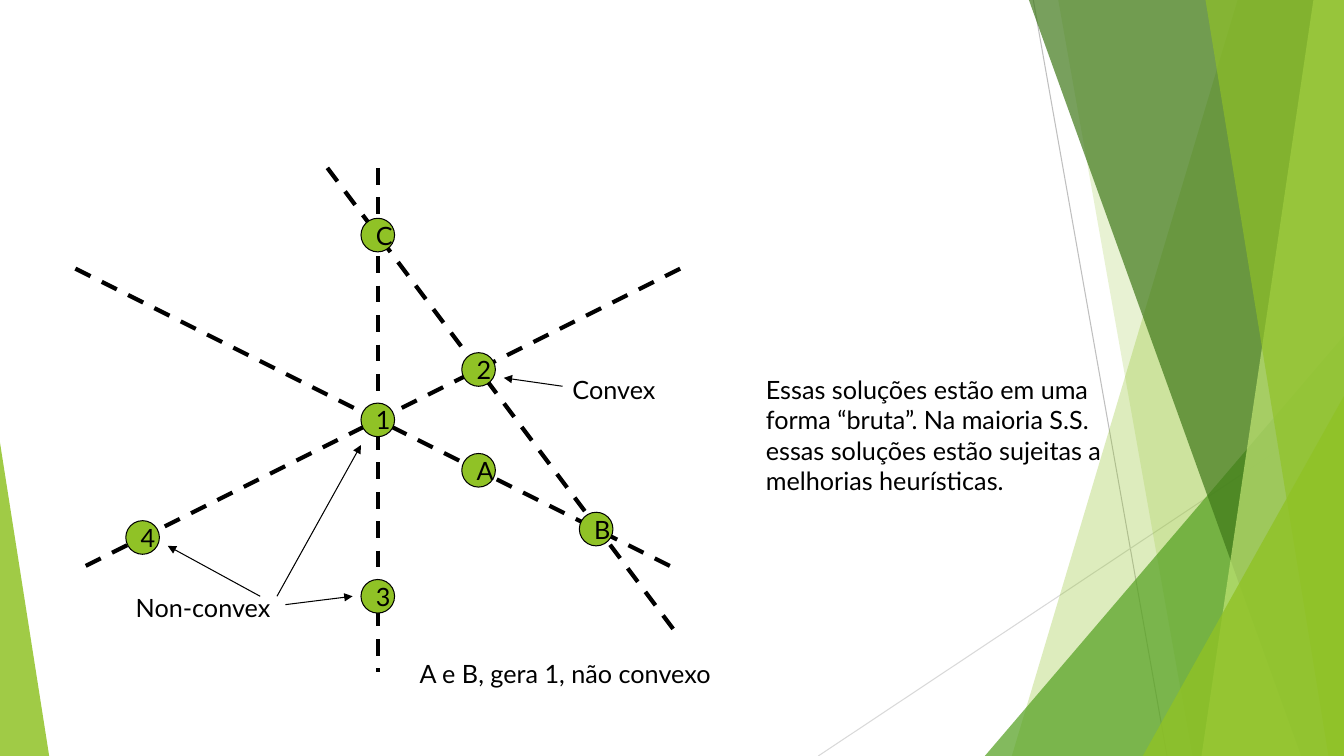
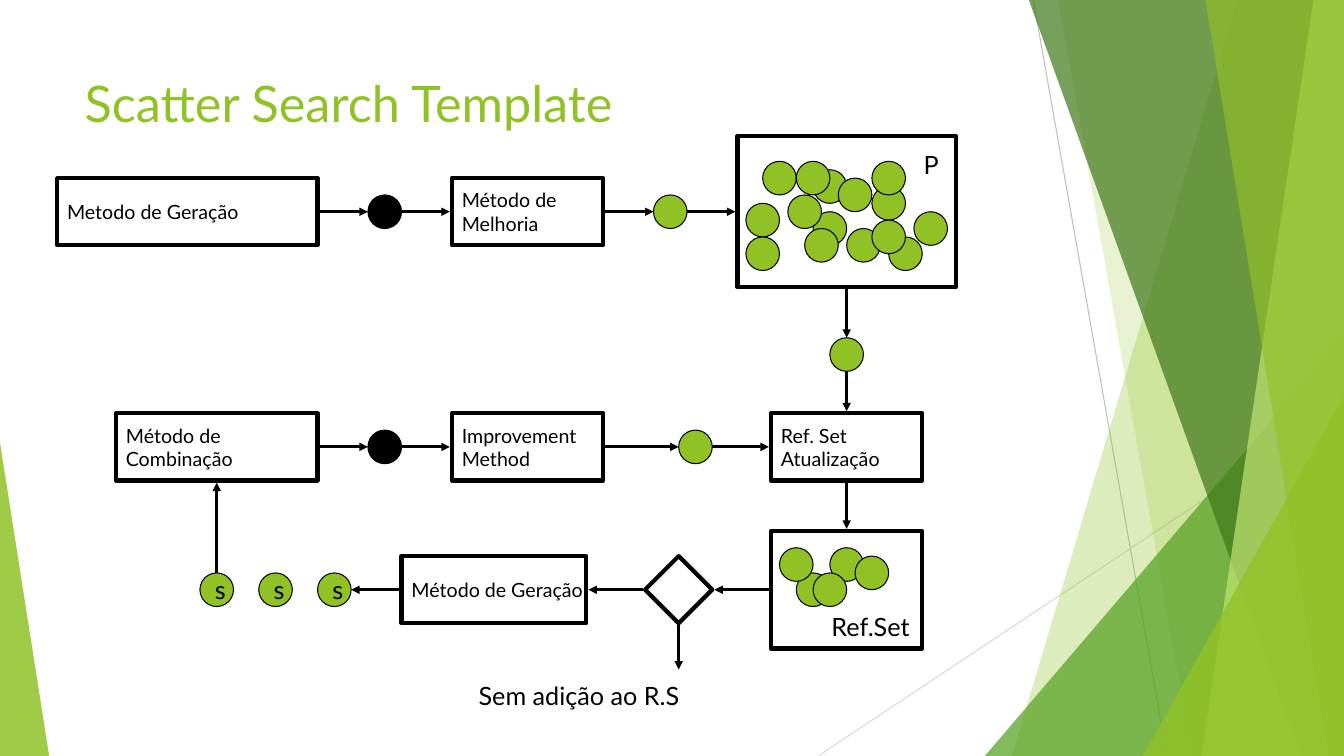
import pptx
import pptx.dml.color
import pptx.enum.dml
import pptx.enum.shapes
import pptx.enum.text
import pptx.oxml.ns
import pptx.util
from lxml import etree

Cm, Pt = pptx.util.Cm, pptx.util.Pt
SHAPE = pptx.enum.shapes.MSO_SHAPE
ANCHOR = pptx.enum.text.MSO_ANCHOR
qn = pptx.oxml.ns.qn

WIDTH, HEIGHT = 33.87, 19.05
STEP = 2.54 / 12  # diagram grid, in cm
GAP = 0.25  # space between a box edge and an arrow, in steps
RADIUS = 2  # dot radius, in steps
FONT = "Lato"
GREEN, BLACK = "90C226", "000000"


def rgb(value):
    return pptx.dml.color.RGBColor.from_string(value)


def write(sp, text, size=18, color=BLACK, anchor=ANCHOR.TOP, wrap=False):
    """Fill a shape with left-aligned text, one paragraph a line."""
    tf = sp.text_frame
    tf.word_wrap = wrap
    tf.auto_size = pptx.enum.text.MSO_AUTO_SIZE.NONE
    tf.vertical_anchor = anchor
    for i, line in enumerate(text.split("\n")):
        p = tf.paragraphs[0] if i == 0 else tf.add_paragraph()
        p.alignment = pptx.enum.text.PP_ALIGN.LEFT
        r = p.add_run()
        r.text = line
        r.font.name, r.font.size = FONT, Pt(size)
        r.font.color.rgb = rgb(color)


def paint(sp, fill=None, alpha=None, weight=None):
    """Set fill, opacity in percent and black outline."""
    sp.shadow.inherit = False
    if fill:
        sp.fill.solid()
        sp.fill.fore_color.rgb = rgb(fill)
    else:
        sp.fill.background()
    if weight:
        sp.line.color.rgb, sp.line.width = rgb(BLACK), Pt(weight)
    else:
        sp.line.fill.background()
    if alpha:
        clr = sp.element.xpath("./p:spPr/a:solidFill/a:srgbClr")[0]
        etree.SubElement(clr, qn("a:alpha"), val=str(alpha * 1000))
    return sp


def draw_line(slide, start, end, color=BLACK, weight=0.75, dash=False, arrow=False):
    sp = slide.shapes.add_connector(
        pptx.enum.shapes.MSO_CONNECTOR.STRAIGHT, *start, *end)
    sp.line.color.rgb, sp.line.width = rgb(color), Pt(weight)
    if dash:
        sp.line.dash_style = pptx.enum.dml.MSO_LINE.DASH
    if arrow:
        ln = sp.element.xpath("./p:spPr/a:ln")[0]
        etree.SubElement(ln, qn("a:tailEnd"), type="triangle")
    etree.SubElement(sp.element.spPr, qn("a:effectLst"))


# Parts placed on the step grid of a box, given by its left and top in cm
def place(box, x, y):
    return Cm(box[0] + x * STEP), Cm(box[1] + y * STEP)


def inner(box, x, y):
    return box[0] + x * STEP, box[1] + y * STEP


def add_line(slide, box, x1, y1, x2, y2, **fmt):
    draw_line(slide, place(box, x1, y1), place(box, x2, y2), **fmt)


def add_dot(slide, box, x, y, text="", fill=GREEN):
    size = Cm(2 * RADIUS * STEP)
    sp = slide.shapes.add_shape(
        SHAPE.OVAL, *place(box, x - RADIUS, y - RADIUS), size, size)
    paint(sp, fill, weight=0.75)
    if text:
        write(sp, text, anchor=ANCHOR.MIDDLE)


def add_box(slide, box, x, y, w, h, text="", kind=SHAPE.RECTANGLE):
    sp = slide.shapes.add_shape(
        kind, *place(box, x, y), Cm(w * STEP), Cm(h * STEP))
    paint(sp, weight=3)
    if text:
        write(sp, text, size=14, anchor=ANCHOR.MIDDLE)


def add_label(slide, box, x, y, w, text, h=4.8, **fmt):
    sp = slide.shapes.add_textbox(*place(box, x, y), Cm(w * STEP), Cm(h * STEP))
    write(sp, text, **fmt)


# Shared background
def add_band(slide, top_x, bottom_x, color, alpha):
    fb = slide.shapes.build_freeform(Cm(top_x), 0)
    fb.add_line_segments([(Cm(WIDTH), 0), (Cm(WIDTH), Cm(HEIGHT)),
                          (Cm(bottom_x), Cm(HEIGHT))])
    paint(fb.convert_to_shape(), color, alpha)


def add_corner(slide, left, top, width, apex, color, alpha):
    sp = slide.shapes.add_shape(SHAPE.ISOSCELES_TRIANGLE, Cm(left), Cm(top),
                                Cm(width), Cm(HEIGHT - top))
    sp.adjustments[0] = apex
    paint(sp, color, alpha)


def decorate_master(prs, slide):
    """Draw the green facets with a slide's tools, then move them to the master."""
    draw_line(slide, (Cm(26.04), 0), (Cm(29.41), Cm(HEIGHT)), color="BFBFBF")
    draw_line(slide, (Cm(WIDTH), Cm(10.24)), (Cm(20.62), Cm(HEIGHT)), color="D9D9D9")
    add_band(slide, 31.19, 25.5, GREEN, 30)
    add_band(slide, 26.67, 30.05, GREEN, 20)
    add_corner(slide, 24.82, 8.46, WIDTH - 24.82, 1, "54A021", 72)
    add_band(slide, 25.93, 32.79, "3F7819", 70)
    add_band(slide, 33.1, 30.28, "C0E474", 70)
    add_band(slide, 30.38, 33.48, GREEN, 65)
    add_corner(slide, 28.8, 9.98, WIDTH - 28.8, 1, GREEN, 80)
    add_corner(slide, 0, 11.15, 1.24, 0, GREEN, 85)
    tree = prs.slide_master.shapes.element
    for i, sp in enumerate(list(slide.shapes)):
        sp.element.xpath(".//p:cNvPr")[0].set("id", str(100 + i))
        tree.insert(2 + i, sp.element)


# Slide 1: convex and non-convex combinations
def draw_combinations(slide, box):
    for ends in [(36, 0, 36, 60), (72, 12, 0, 48), (0, 12, 72, 48), (30, 0, 72, 56)]:
        add_line(slide, box, *ends, weight=3, dash=True)
    nodes = {"A": (48, 36), "B": (62, 43), "C": (36, 8), "1": (36, 30),
             "2": (48, 24), "3": (36, 51), "4": (8, 44)}
    for name, (x, y) in nodes.items():
        add_dot(slide, box, x, y, name)
    add_label(slide, box, 58, 24, 12.6, "Convex")
    add_label(slide, box, 6, 50, 18.4, "Non-convex")
    for ends in [(58, 26, 51, 25), (24, 51, 34, 33), (25, 52, 33, 51), (22, 51, 11, 45)]:
        add_line(slide, box, *ends, arrow=True)
    add_label(slide, box, 39.8, 57.8, 38.5, "A e B, gera 1, não convexo")


def draw_remark(slide, box):
    add_label(slide, box, 0, 0, 46.9,
              "Essas soluções estão em uma forma “bruta”. Na maioria S.S. "
              "essas soluções estão sujeitas a melhorias heurísticas.",
              h=15.7, wrap=True)


# Slide 2: flow of the method
def draw_set(slide, box, w, h, dots, label):
    """A framed set of solutions; label is x, y, width and text."""
    add_box(slide, box, 0, 0, w, h)
    for x, y in dots:
        add_dot(slide, box, x, y)
    add_label(slide, box, *label)


def draw_flow(slide, box):
    rows = top, middle, bottom = 9, 37, 54
    steps = [(0, top, 31, "Metodo de Geração"),
             (47, top, 18, "Método de\nMelhoria"),
             (7, middle, 24, "Método de\nCombinação"),
             (47, middle, 18, "Improvement\nMethod"),
             (85, middle, 18, "Ref. Set\nAtualização"),
             (41, bottom, 22, "Método de Geração")]
    for x, y, w, text in steps:
        add_box(slide, box, x, y - 4, w, 8, text)
    add_box(slide, box, 70, bottom - 4, 8, 8, kind=SHAPE.DIAMOND)

    # Solutions between the steps
    for y in rows[:2]:
        add_dot(slide, box, 39, y, fill=BLACK)
    for x, y in [(73, top), (94, 26), (76, middle)]:
        add_dot(slide, box, x, y)
    for x in (19, 26, 33):
        add_dot(slide, box, x, bottom, "s")

    # Arrows: along each row, then down or up each column
    across = {top: [(31 + GAP, 37), (41, 47 - GAP), (65 + GAP, 71), (75, 81 - GAP)],
              middle: [(31 + GAP, 37), (41, 47 - GAP), (65 + GAP, 74), (78, 85 - GAP)],
              bottom: [(85 - GAP, 78 + GAP), (70 - GAP, 63 + GAP), (41 - GAP, 35)]}
    upright = {94: [(18 + GAP, 24), (28, 33 - GAP), (41 + GAP, 47 - GAP)],
               19: [(52, 41 + GAP)],
               74: [(58, 63.5)]}
    arrows = [(a, y, b, y) for y, spans in across.items() for a, b in spans]
    arrows += [(x, a, x, b) for x, spans in upright.items() for a, b in spans]
    for ends in arrows:
        add_line(slide, box, *ends, weight=2, arrow=True)
    add_label(slide, box, 49, 64.2, 27.2, "Sem adição ao R.S")

    # Population and reference set
    population = [(20, 14), (11, 6), (3, 10), (18, 8), (11, 11), (5, 5), (10, 13),
                  (3, 14), (15, 13), (9, 5), (18, 12), (8, 9), (23, 11), (14, 7), (18, 5)]
    draw_set(slide, inner(box, 81, 0), 26, 18, population, (21, 1, 4.1, "P"))
    reference = [(5, 7), (9, 4), (12, 5), (7, 7), (3, 4)]
    draw_set(slide, inner(box, 85, 47), 18, 14, reference, (6, 9, 12.2, "Ref.Set"))


def set_title(slide, text):
    sp = slide.shapes.title
    sp.left, sp.top, sp.width, sp.height = Cm(1.88), Cm(1.7), Cm(23.88), Cm(3.66)
    write(sp, text, size=36, color=GREEN, wrap=True)


def main():
    prs = pptx.Presentation()
    prs.slide_width, prs.slide_height = Cm(WIDTH), Cm(HEIGHT)
    title_only, blank = prs.slide_layouts[5], prs.slide_layouts[6]

    slide = prs.slides.add_slide(blank)
    decorate_master(prs, slide)
    draw_remark(slide, (19.05, 9.31))
    draw_combinations(slide, (1.9, 4.23))

    slide = prs.slides.add_slide(title_only)
    set_title(slide, "Scatter Search Template")
    draw_flow(slide, (1.44, 3.43))
    prs.save("out.pptx")


if __name__ == "__main__":
    main()
